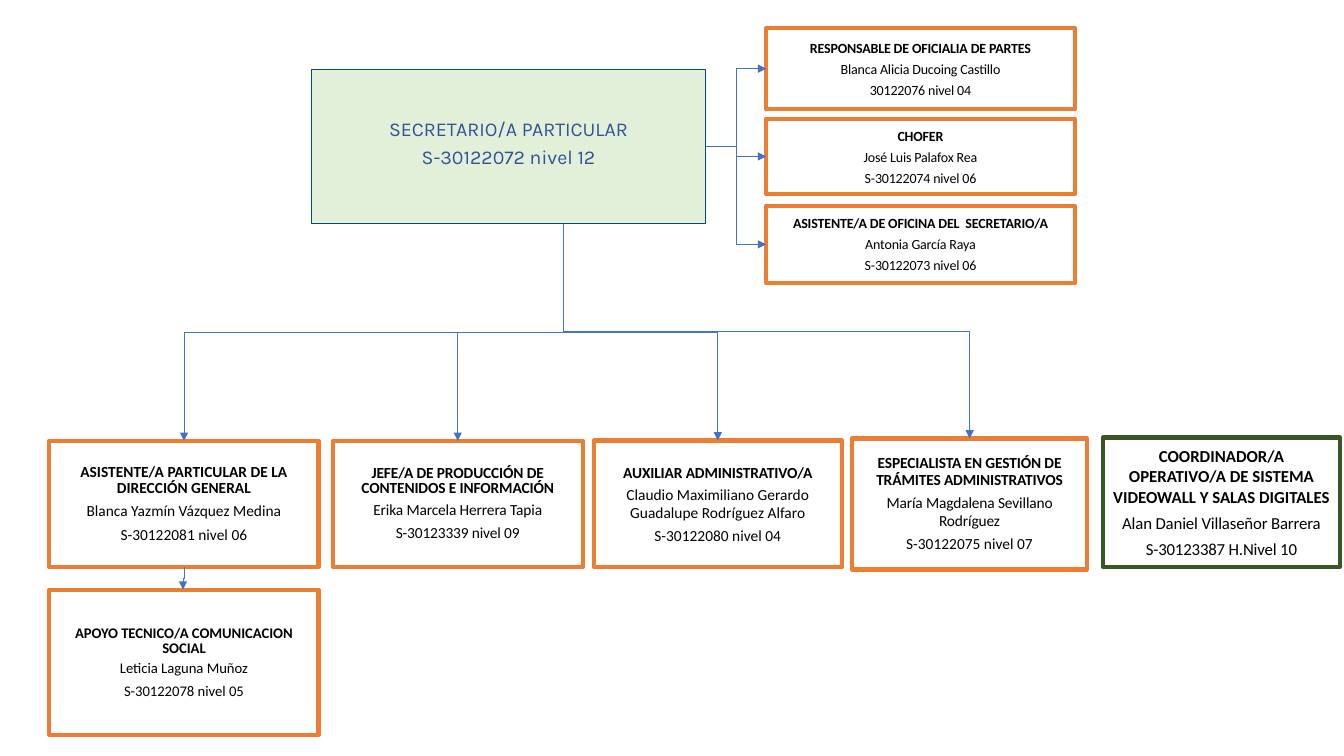
from dataclasses import dataclass
from typing import Any

from lxml.etree import SubElement
from pptx import Presentation
from pptx.dml.color import RGBColor
from pptx.enum.shapes import MSO_CONNECTOR as Link, MSO_SHAPE as Shape
from pptx.enum.text import MSO_ANCHOR as Anchor, PP_ALIGN as Align
from pptx.oxml.ns import qn
from pptx.util import Inches, Length, Pt

COLUMN = ROW = Inches(0.1)  # the slide is 133.3 columns by 75 rows


@dataclass(frozen=True)
class Theme:
    orange: str = "ED7D31"
    green: str = "385723"
    pale_green: str = "E2F0D9"
    navy: str = "004A86"
    title_blue: str = "2F5597"
    link_blue: str = "4472C4"
    black: str = "000000"
    body_font: str = "Calibri"
    title_font: str = "Karla"
    title_size: float = 14
    large: float = 12
    normal: float = 11
    compact: float = 10.5
    small: float = 10
    frame: float = 3
    thin_frame: float = 0.75
    link: float = 0.5


THEME = Theme()


@dataclass(frozen=True)
class Line:
    """A paragraph; tracking is in hundredths of a point."""
    text: str
    before: float = 0
    spacing: float | Length = 1.0
    after: float = 0
    tracking: int = 0


@dataclass(frozen=True)
class Post:
    """A box of the chart, placed in grid columns and rows."""
    column: float
    row: float
    columns: float
    rows: float
    lines: tuple[Line, ...]
    size: float = THEME.normal
    border: str = THEME.orange
    border_width: float = THEME.frame
    fill: str | None = None
    color: str = THEME.black
    font: str = THEME.body_font
    bold_heading: bool = True
    margins: tuple[float, float, float, float] = (1, 0.5, 1, 0.5)

    @property
    def center(self) -> float:
        return self.column + self.columns / 2


SECRETARY = Post(
    30.9, 6.9, 39.1, 15.25,
    (Line("SECRETARIO/A PARTICULAR", spacing=0.9, after=5),
     Line("S-30122072 nivel 12", spacing=0.9, after=5)),
    size=THEME.title_size, border=THEME.navy, border_width=THEME.thin_frame,
    fill=THEME.pale_green, color=THEME.title_blue, font=THEME.title_font,
    bold_heading=False, margins=(0.1, 0.1, 0.1, 0.6))

OFFICE = (
    Post(76, 2.8, 30.6, 8.05,
         (Line("RESPONSABLE DE OFICIALIA DE PARTES", 4, tracking=-10),
          Line("Blanca Alicia Ducoing Castillo", spacing=1.25, tracking=-10),
          Line("30122076 nivel 04", spacing=1.25, tracking=-10)), THEME.small),
    Post(76, 11.8, 30.6, 7.45,
         (Line("CHOFER", 4, tracking=-10),
          Line("José Luis Palafox Rea", 3, tracking=-10),
          Line("S-30122074 nivel 06", 3, tracking=-10)), THEME.small),
    Post(76, 20.4, 30.6, 7.7,
         (Line("ASISTENTE/A DE OFICINA DEL  SECRETARIO/A", 2.3, Pt(10.8), tracking=-10),
          Line("Antonia García Raya", 2.9, tracking=-10),
          Line("S-30122073 nivel 06", 3, tracking=-10)), THEME.small),
)

STAFF = (
    Post(4.9, 43.74, 26.7, 12.52,
         (Line("ASISTENTE/A PARTICULAR DE LA DIRECCIÓN GENERAL", 2.4, Pt(11.4)),
          Line("Blanca Yazmín Vázquez Medina", 0.9, Pt(15.7)),
          Line("S-30122081 nivel 06", 0.9, Pt(15.7)))),
    Post(33, 43.74, 24.8, 12.52,
         (Line("JEFE/A DE PRODUCCIÓN DE CONTENIDOS E INFORMACIÓN", 2.3, Pt(10.8), tracking=-10),
          Line("Erika Marcela Herrera Tapia", 0.8, Pt(15), tracking=-10),
          Line("S-30123339 nivel 09", 0.8, Pt(15), tracking=-10))),
    Post(58.9, 43.7, 24.6, 12.55,
         (Line("AUXILIAR ADMINISTRATIVO/A", 4.2, tracking=-10),
          Line("Claudio Maximiliano Gerardo", 3.2, Pt(12.6)),
          Line("Guadalupe Rodríguez Alfaro", 0, Pt(12.6)),
          Line("S-30122080 nivel 04", 3.4))),
    Post(84.52, 43.5, 23.3, 13,
         (Line("ESPECIALISTA EN GESTIÓN DE TRÁMITES ADMINISTRATIVOS", 2.5, Pt(11.9), tracking=-10),
          Line("María Magdalena Sevillano Rodríguez", 3, tracking=-10),
          Line("S-30122075 nivel 07", 3.4))),
)

SUPPORT = Post(
    4.9, 58.5, 26.7, 14.4,
    (Line("APOYO TECNICO/A COMUNICACION SOCIAL", 2.4, Pt(11.4)),
     Line("Leticia Laguna Muñoz", 2.4, Pt(11.4)),
     Line("S-30122078 nivel 05", 0.9, Pt(15.7))), THEME.compact)

COORDINATOR = Post(
    109.4, 43.4, 23.5, 12.85,
    (Line("COORDINADOR/A OPERATIVO/A DE SISTEMA VIDEOWALL Y SALAS DIGITALES", 4.2),
     Line("Alan Daniel Villaseñor Barrera", 4.2, tracking=-10),
     Line("S-30123387 H.Nivel 10", 4.2, tracking=-10)), THEME.large, border=THEME.green)


def apply(target: Any, values: dict[str, Any]) -> None:
    for name, value in values.items():
        setattr(target, name, value)


def rgb(code: str) -> RGBColor:
    return RGBColor.from_string(code)


def grid(columns: float, rows: float) -> tuple[int, int]:
    return round(columns * COLUMN), round(rows * ROW)


def draw_post(page: Any, post: Post) -> Any:
    box = page.shapes.add_shape(
        Shape.RECTANGLE, *grid(post.column, post.row), *grid(post.columns, post.rows))
    box.shadow.inherit = False
    if post.fill:
        box.fill.solid()
        box.fill.fore_color.rgb = rgb(post.fill)
    else:
        box.fill.background()
    box.line.color.rgb = rgb(post.border)
    box.line.width = Pt(post.border_width)
    frame = box.text_frame
    left, top, right, bottom = (round(share * COLUMN) for share in post.margins)
    apply(frame, {"word_wrap": True, "vertical_anchor": Anchor.MIDDLE,
                  "margin_left": left, "margin_top": top,
                  "margin_right": right, "margin_bottom": bottom})
    for index, line in enumerate(post.lines):
        para = frame.add_paragraph() if index else frame.paragraphs[0]
        apply(para, {"alignment": Align.CENTER, "line_spacing": line.spacing,
                     "space_before": Pt(line.before), "space_after": Pt(line.after)})
        span = para.add_run()
        span.text = line.text
        apply(span.font, {"name": post.font, "size": Pt(post.size),
                          "bold": post.bold_heading and index == 0})
        span.font.color.rgb = rgb(post.color)
        span._r.get_or_add_rPr().set("spc", str(line.tracking))
    return box


def draw_elbow(page: Any, begin: tuple[float, float], end: tuple[float, float]) -> Any:
    arrow = page.shapes.add_connector(Link.ELBOW, *grid(*begin), *grid(*end))
    arrow.line.color.rgb = rgb(THEME.link_blue)
    arrow.line.width = Pt(THEME.link)
    SubElement(arrow.line._get_or_add_ln(), qn("a:tailEnd"), type="triangle")
    SubElement(arrow._element.spPr, qn("a:effectLst"))
    return arrow


def draw_drop(page: Any, begin: tuple[float, float], end: tuple[float, float]) -> None:
    """Draw an elbow that leaves and arrives vertically, as a turned horizontal one."""
    (x1, y1), (x2, y2) = begin, end
    middle_x, middle_y = (x1 + x2) / 2, (y1 + y2) / 2
    goes_left = x2 < x1
    half_width = (y2 - y1) / 2 * (1 if goes_left else -1)
    half_height = abs(x2 - x1) / 2
    arrow = draw_elbow(page, (middle_x - half_width, middle_y - half_height),
                       (middle_x + half_width, middle_y + half_height))
    arrow._element.spPr.find(qn("a:xfrm")).set("rot", str((90 if goes_left else 270) * 60000))


def main() -> None:
    deck = Presentation()
    apply(deck, {"slide_width": Inches(13.33), "slide_height": Inches(7.5)})
    page = deck.slides.add_slide(deck.slide_layouts[6])

    secretary_box = draw_post(page, SECRETARY)
    for post in (*STAFF, SUPPORT, COORDINATOR):
        draw_post(page, post)
    for post in STAFF:
        draw_drop(page, (55.9, 22.2), (post.center, post.row))
    assistant = STAFF[0]
    draw_drop(page, (assistant.center + 0.05, assistant.row + assistant.rows),
              (SUPPORT.center - 0.1, SUPPORT.row))

    for post in OFFICE:
        office_box = draw_post(page, post)
        arrow = draw_elbow(page, (70, 14.5), (post.column, post.row + post.rows / 2))
        arrow.begin_connect(secretary_box, 3)
        arrow.end_connect(office_box, 1)
    deck.save("out.pptx")


if __name__ == "__main__":
    main()
